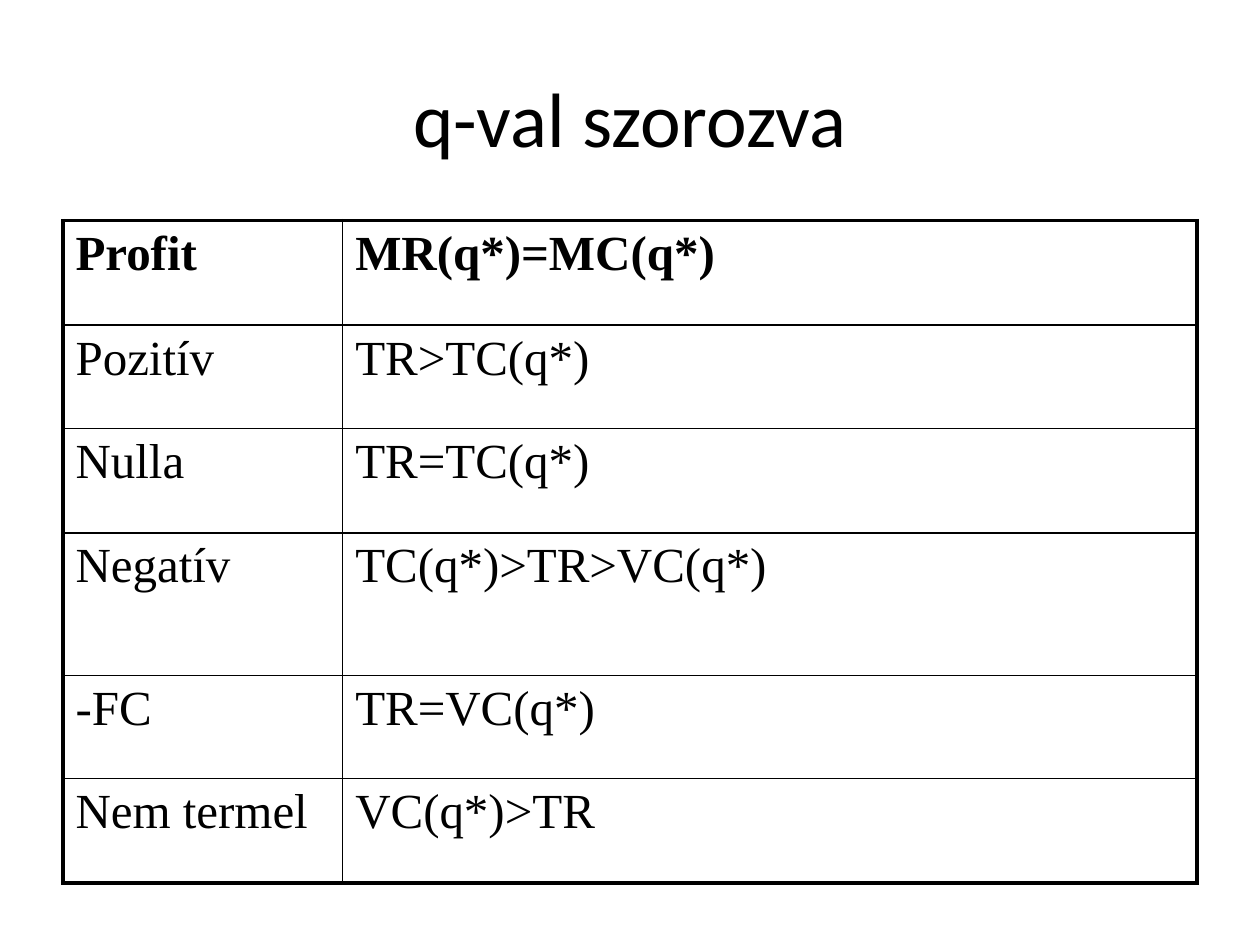
from lxml import etree
from pptx import Presentation
from pptx.dml.color import RGBColor
from pptx.enum.text import MSO_ANCHOR, PP_ALIGN
from pptx.oxml.ns import qn
from pptx.util import Inches, Pt

CENTER = PP_ALIGN.CENTER
MIDDLE = MSO_ANCHOR.MIDDLE

THEME = {
    "ink": "000000",
    "title_font": "Calibri",
    "title_size": 44,
    "table_font": "Times New Roman",
    "table_size": 28,
    "outer_line": 2.25,
    "inner_line": 1,
}

ROWS = [
    ("Profit", "MR(q*)=MC(q*)"),
    ("Pozitív", "TR>TC(q*)"),
    ("Nulla", "TR=TC(q*)"),
    ("Negatív", "TC(q*)>TR>VC(q*)"),
    ("-FC", "TR=VC(q*)"),
    ("Nem termel", "VC(q*)>TR"),
]
COLUMN_WIDTHS = [2.22, 6.78]
ROW_HEIGHTS = [0.83, 0.82, 0.83, 1.13, 0.82, 0.83]


def style_text(paragraph, font_name, size, bold=False):
    for span in paragraph.runs:
        span.font.name = font_name
        span.font.size = Pt(size)
        span.font.bold = bold
        span.font.color.rgb = RGBColor.from_string(THEME["ink"])


def add_border(cell, side, width):
    properties = cell._tc.get_or_add_tcPr()
    line = etree.SubElement(properties, qn(f"a:ln{side}"), w=str(Pt(width)))
    fill = etree.SubElement(line, qn("a:solidFill"))
    etree.SubElement(fill, qn("a:srgbClr"), val=THEME["ink"])


deck = Presentation()
deck.slide_width = Inches(10)
deck.slide_height = Inches(7.5)
page = deck.slides.add_slide(deck.slide_layouts[5])

# Title
title = page.shapes.title
title.left, title.top = Inches(0.5), Inches(0.3)
title.width, title.height = Inches(9), Inches(1.25)
title.text_frame.text = "q-val szorozva"
title.text_frame.vertical_anchor = MIDDLE
heading = title.text_frame.paragraphs[0]
heading.alignment = CENTER
style_text(heading, THEME["title_font"], THEME["title_size"])

# Table grid
table = page.shapes.add_table(
    len(ROWS), len(COLUMN_WIDTHS),
    Inches(0.5), Inches(1.75), Inches(9), Inches(5.25),
).table
table.first_row = False
table.horz_banding = False
for column, width in zip(table.columns, COLUMN_WIDTHS):
    column.width = Inches(width)
for row, height in zip(table.rows, ROW_HEIGHTS):
    row.height = Inches(height)

# Cells: thick lines around the table, thin lines inside
last_row, last_column = len(ROWS) - 1, len(COLUMN_WIDTHS) - 1
for row_index, texts in enumerate(ROWS):
    for column_index, text in enumerate(texts):
        cell = table.cell(row_index, column_index)
        cell.text_frame.text = text
        style_text(cell.text_frame.paragraphs[0], THEME["table_font"],
                   THEME["table_size"], bold=row_index == 0)
        on_edge = {
            "L": column_index == 0,
            "R": column_index == last_column,
            "T": row_index == 0,
            "B": row_index == last_row,
        }
        for side, outer in on_edge.items():
            add_border(cell, side, THEME["outer_line" if outer else "inner_line"])
        cell.fill.background()

deck.save("out.pptx")
